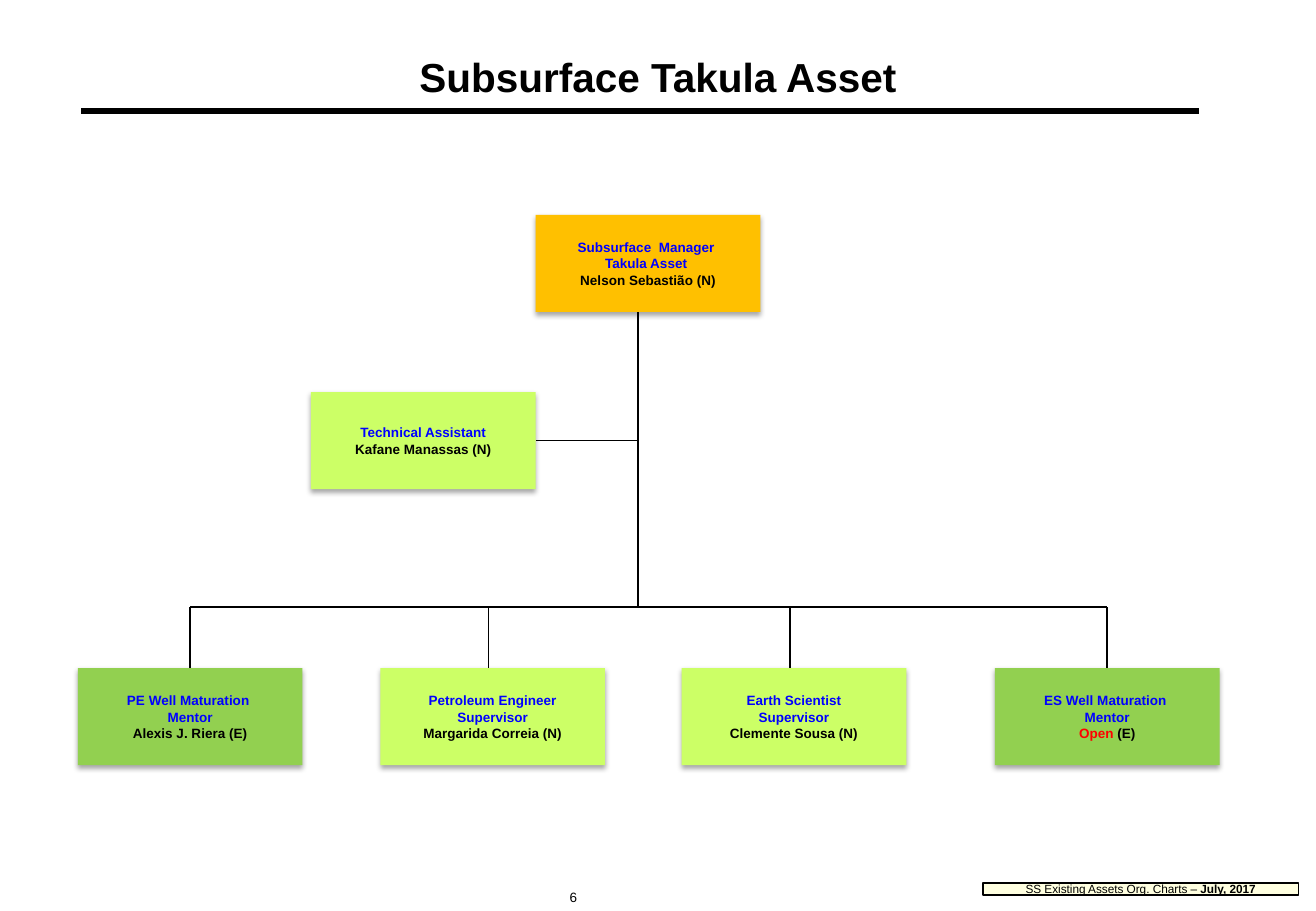
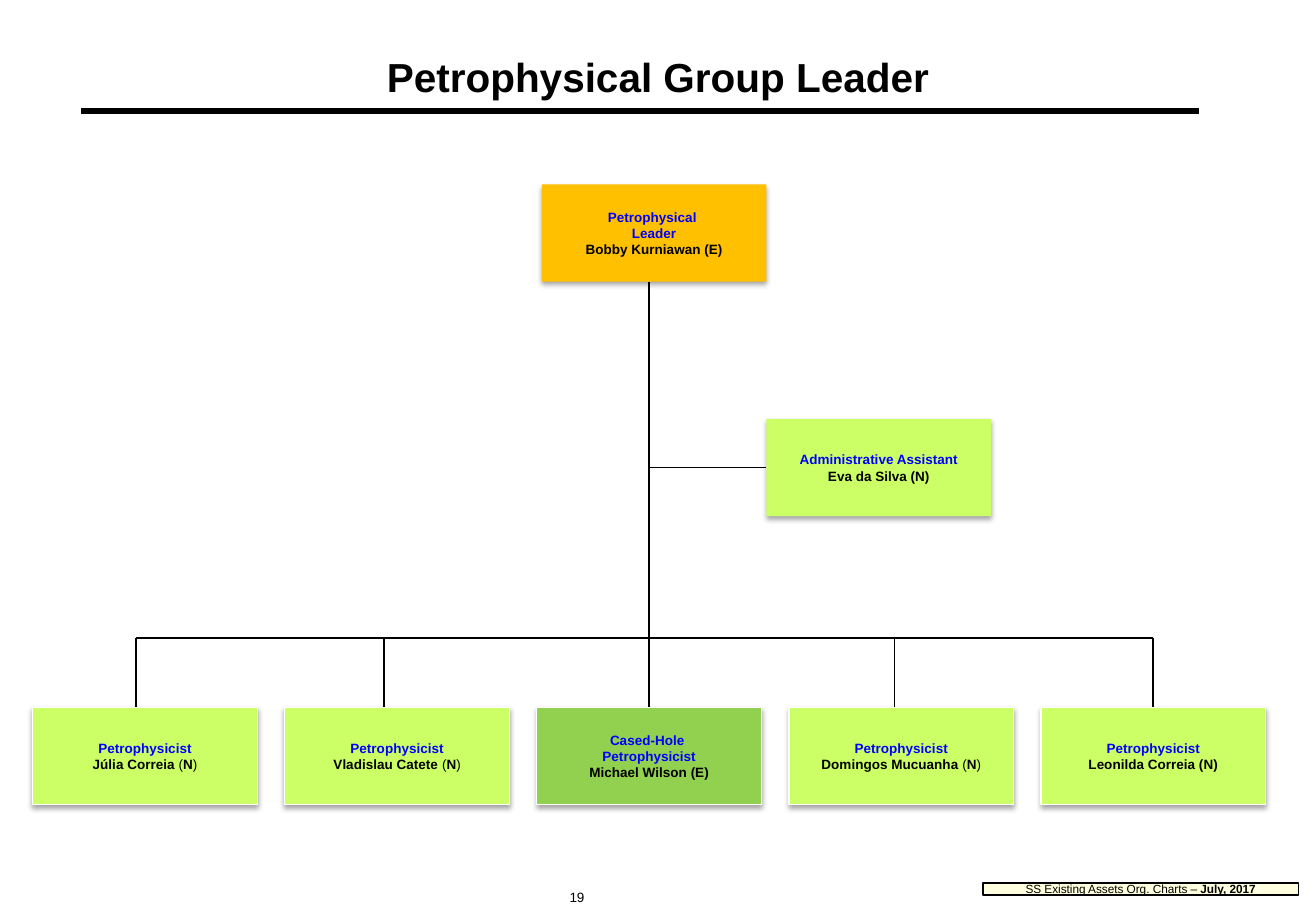
"""Builds two organisation chart slides with a shared title, rule and footer."""
from lxml.etree import SubElement
from pptx import Presentation
from pptx.dml.color import RGBColor
from pptx.enum.shapes import MSO_CONNECTOR as Link, MSO_SHAPE as Shape
from pptx.enum.text import MSO_ANCHOR as Anchor, PP_ALIGN as Align
from pptx.oxml.ns import qn
from pptx.util import Pt

WIDTH, HEIGHT = 780, 540
BOX_W, BOX_H = 133.2, 57.6
FONT = "Arial"
BLACK, WHITE, BLUE, RED = "000000", "FFFFFF", "0000FF", "FF0000"
ORANGE, LIME, GREEN, CREAM = "FFC000", "CCFF66", "92D050", "FFFFCC"
TOP, LEFT, BOTTOM, RIGHT = range(4)
ROW_START, ROW_STEP = 19.4, 149.4

FOOTER = [[("SS Existing Assets Org. Charts – ", {}), ("July, 2017", {"bold": True})]]


def person(name, grade, **name_format):
    """Return the runs of a name with its grade in bold."""
    return [(name, name_format), (f" ({grade})", {})]


def light_person(name, grade):
    """Return the runs of a name whose grade stands in light brackets."""
    return [(name + " ", {}), ("(", {"bold": False}), (grade, {}), (")", {"bold": False})]


# Each box is: left, top, fill, role lines, person runs.
# Each report is: left, fill, role lines, person runs, drop offset from the box centre.
CHARTS = [
    {
        "title": "Subsurface Takula Asset",
        "page": "6",
        "manager": (317.5, 127.4, ORANGE, ["Subsurface  Manager ", "Takula Asset "],
                    person("Nelson Sebastião", "N")),
        "trunk_offset": -6.1,
        "assistant": (184.3, 232.4, LIME, ["Technical Assistant"],
                      person("Kafane Manassas", "N")),
        "assistant_side": RIGHT,
        "bus_y": 360,
        "row_y": 396,
        "row_border": None,
        "reports": [
            (46.1, GREEN, ["PE Well Maturation ", "Mentor"],
             person("Alexis J. Riera", "E"), 0),
            (225.4, LIME, ["Petroleum Engineer", "Supervisor"],
             person("Margarida Correia", "N"), -2.5),
            (404, LIME, ["Earth Scientist", "Supervisor"],
             person("Clemente Sousa", "N"), -2.5),
            (589.7, GREEN, ["ES Well Maturation ", "Mentor"],
             person("Open", "E", color=RED), 0),
        ],
    },
    {
        "title": "Petrophysical Group Leader",
        "page": "19",
        "manager": (321.1, 109.4, ORANGE, ["Petrophysical ", "Leader"],
                    person("Bobby Kurniawan", "E")),
        "trunk_offset": -2.9,
        "assistant": (454.3, 248.4, LIME, ["Administrative Assistant"],
                      person("Eva da Silva", "N")),
        "assistant_side": LEFT,
        "bus_y": 378,
        "row_y": 419.3,
        "row_border": WHITE,
        "reports": [
            (ROW_START + ROW_STEP * place, *report) for place, report in enumerate([
                (LIME, ["Petrophysicist"], light_person("Júlia Correia", "N"), -5.4),
                (LIME, ["Petrophysicist"], light_person("Vladislau Catete", "N"), -7.6),
                (GREEN, ["Cased-Hole ", "Petrophysicist"], person("Michael Wilson", "E"), 0),
                (LIME, ["Petrophysicist"], light_person("Domingos Mucuanha", "N"), -4),
                (LIME, ["Petrophysicist"], person("Leonilda Correia", "N"), 0),
            ])
        ],
    },
]


def rgb(value):
    """Turn a hex string into a colour."""
    return RGBColor.from_string(value)


def write(shape, lines, size=8, bold=False, color=BLACK, align=Align.CENTER,
          anchor=Anchor.MIDDLE, margins=(3.6, 3.6, 3.6, 3.6), wrap=True):
    """Write lines of (text, overrides) runs into a shape."""
    frame = shape.text_frame
    frame.word_wrap = wrap
    frame.vertical_anchor = anchor
    (frame.margin_left, frame.margin_top,
     frame.margin_right, frame.margin_bottom) = map(Pt, margins)
    for index, runs in enumerate(lines):
        paragraph = frame.add_paragraph() if index else frame.paragraphs[0]
        paragraph.alignment = align
        for text, overrides in runs:
            run = paragraph.add_run()
            run.text = text
            run.font.name = FONT
            run.font.size = Pt(size)
            run.font.bold = overrides.get("bold", bold)
            run.font.color.rgb = rgb(overrides.get("color", color))


def add_rectangle(slide, left, top, width, height, fill, border=None, border_width=0.75):
    """Add a plain rectangle without a shadow."""
    rectangle = slide.shapes.add_shape(
        Shape.RECTANGLE, Pt(left), Pt(top), Pt(width), Pt(height))
    rectangle.shadow.inherit = False
    rectangle.fill.solid()
    rectangle.fill.fore_color.rgb = rgb(fill)
    if border:
        rectangle.line.color.rgb = rgb(border)
        rectangle.line.width = Pt(border_width)
    else:
        rectangle.line.fill.background()
    return rectangle


def set_alpha(color_element, percent):
    """Make an XML colour partly transparent."""
    SubElement(color_element, qn("a:alpha"), val=str(percent * 1000))


def add_box(slide, left, top, fill, role, holder, border=None):
    """Add a position box with a soft shadow below it."""
    box = add_rectangle(slide, left, top, BOX_W, BOX_H, fill, border)
    effects = box._element.spPr.find(qn("a:effectLst"))
    shadow = SubElement(effects, qn("a:outerShdw"), blurRad=str(Pt(3.1)),
                        dist=str(Pt(1.8)), dir="5400000", rotWithShape="0")
    set_alpha(SubElement(shadow, qn("a:srgbClr"), val=BLACK), 35)
    role_lines = [[(line, {"color": BLUE})] for line in role]
    write(box, role_lines + [holder], bold=True)
    return box


def add_line(slide, start, end, width=1, join=None):
    """Add a straight line, its end joined to a (box, side) when given."""
    line = slide.shapes.add_connector(Link.STRAIGHT, *map(Pt, (*start, *end)))
    line.line.color.rgb = rgb(BLACK)
    line.line.width = Pt(width)
    SubElement(line._element.spPr, qn("a:effectLst"))
    if join:
        line.end_connect(*join)


def add_frame(slide, title, page):
    """Add the rule, footer, title and page number."""
    add_line(slide, (48.2, 65.8), (710.6, 65.8), width=3.75)
    footer = add_rectangle(slide, 582.5, 523.4, 187.2, 7.2, CREAM, BLACK, 1)
    set_alpha(footer._element.spPr.find(qn("a:solidFill"))[0], 60)
    write(footer, FOOTER, size=7, wrap=False)
    heading = slide.shapes.add_textbox(0, 0, Pt(WIDTH), Pt(59.8))
    write(heading, [[(title, {})]], size=24, bold=True, anchor=Anchor.BOTTOM,
          margins=(7.2, 3.6, 7.2, 0))
    number = slide.shapes.add_textbox(Pt(330.5), Pt(523.4), Pt(120.2), Pt(16.6))
    write(number, [[(page, {})]], align=Align.LEFT, anchor=Anchor.TOP,
          margins=(7.2, 3.6, 7.2, 3.6))


def add_chart_tree(slide, chart):
    """Add the boxes of a chart and the lines between them."""
    manager_left, manager_top = chart["manager"][:2]
    add_box(slide, *chart["manager"])
    trunk_x = manager_left + BOX_W / 2 + chart["trunk_offset"]
    bus_y, row_y = chart["bus_y"], chart["row_y"]
    add_line(slide, (trunk_x, manager_top + BOX_H), (trunk_x, bus_y))

    assistant_left, assistant_top = chart["assistant"][:2]
    assistant = add_box(slide, *chart["assistant"])
    side = chart["assistant_side"]
    branch_x = assistant_left + (BOX_W if side == RIGHT else 0)
    branch_y = assistant_top + BOX_H / 2
    add_line(slide, (trunk_x, branch_y), (branch_x, branch_y), join=(assistant, side))

    drops = []
    for left, fill, role, holder, offset in chart["reports"]:
        report = add_box(slide, left, row_y, fill, role, holder, chart["row_border"])
        drop_x = left + BOX_W / 2 + offset
        join = None if offset else (report, TOP)
        add_line(slide, (drop_x, bus_y), (drop_x, row_y), join=join)
        drops.append(drop_x)
    add_line(slide, (drops[0], bus_y), (drops[-1], bus_y))


def main():
    """Build and save the presentation."""
    deck = Presentation()
    deck.slide_width, deck.slide_height = Pt(WIDTH), Pt(HEIGHT)
    for chart in CHARTS:
        slide = deck.slides.add_slide(deck.slide_layouts[6])
        add_frame(slide, chart["title"], chart["page"])
        add_chart_tree(slide, chart)
    deck.save("out.pptx")


if __name__ == "__main__":
    main()
